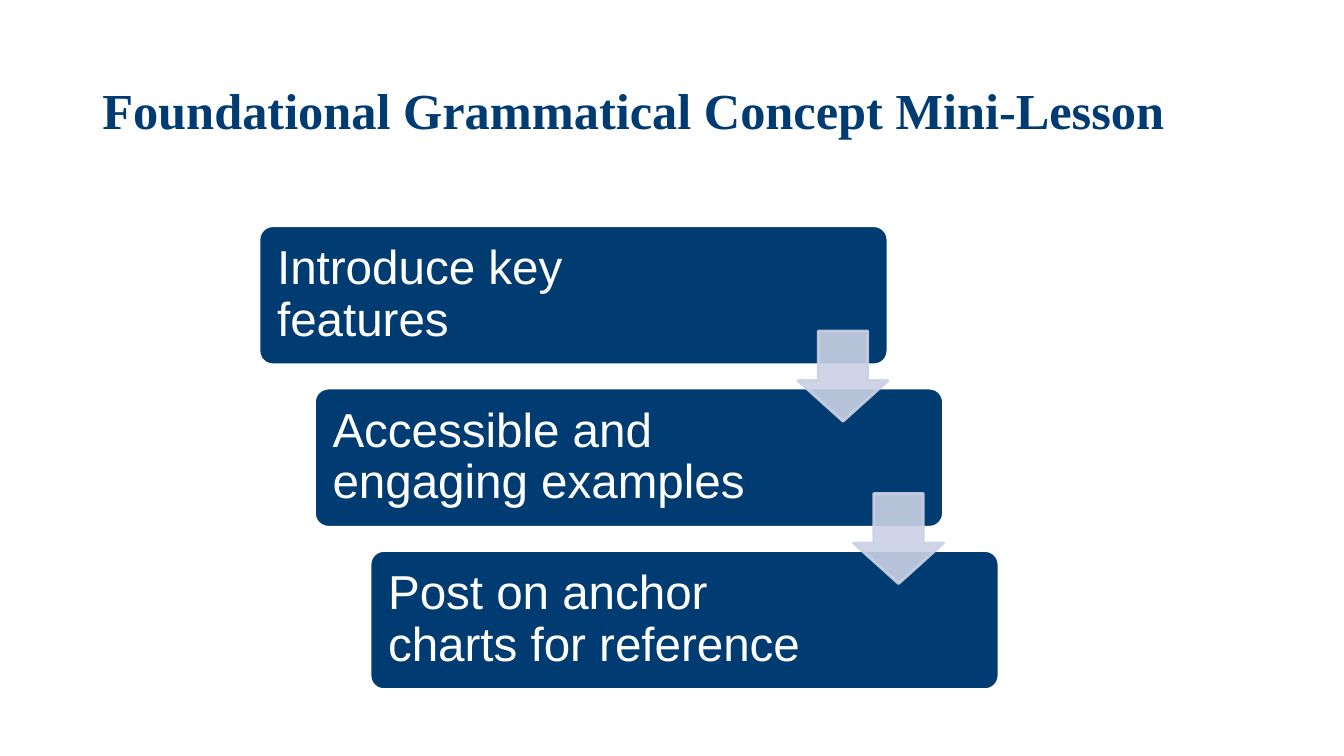
"""Build the slide on the steps of a grammar mini-lesson."""
from lxml.etree import SubElement
from pptx import Presentation
from pptx.dml.color import RGBColor
from pptx.enum.shapes import MSO_SHAPE as Shape
from pptx.enum.text import MSO_ANCHOR as Anchor
from pptx.oxml.ns import qn
from pptx.util import Pt

COLORS = {"title": "003B71", "step": "003C71", "arrow": "CAD1E4", "white": "FFFFFF"}
STEPS = [
    "Introduce key features",
    "Accessible and engaging examples",
    "Post on anchor charts for reference",
]
STEP_LEFT, STEP_TOP = 185, 161.2
SHIFT_X, SHIFT_Y = 39.65, 116


class StepSlide:
    def __init__(self, deck):
        self.shapes = deck.slides.add_slide(deck.slide_layouts[6]).shapes

    def text(self, words, left, top, width, height, size, font, color,
             bold=False, inset_x=10, inset_y=10):
        box = self.shapes.add_textbox(Pt(left), Pt(top), Pt(width), Pt(height))
        frame = box.text_frame
        frame.word_wrap = True
        frame.vertical_anchor = Anchor.MIDDLE
        frame.margin_left = frame.margin_right = Pt(inset_x)
        frame.margin_top = frame.margin_bottom = Pt(inset_y)
        frame.text = words
        para = frame.paragraphs[0]
        para.line_spacing = 0.9
        span = para.runs[0]
        span.font.name = font
        span.font.size = Pt(size)
        span.font.bold = bold
        span.font.color.rgb = RGBColor.from_string(COLORS[color])

    def shape(self, kind, left, top, width, height, fill, line, adjustments, opacity=100):
        item = self.shapes.add_shape(kind, Pt(left), Pt(top), Pt(width), Pt(height))
        item.shadow.inherit = False
        for index, value in enumerate(adjustments):
            item.adjustments[index] = value
        item.fill.solid()
        item.fill.fore_color.rgb = RGBColor.from_string(COLORS[fill])
        item.line.color.rgb = RGBColor.from_string(COLORS[line])
        item.line.width = Pt(2)
        if opacity < 100:
            for color in item.element.spPr.iter(qn("a:srgbClr")):
                SubElement(color, qn("a:alpha"), val=str(opacity * 1000))

    def step(self, words, left, top):
        self.shape(Shape.ROUNDED_RECTANGLE, left, top, 449.3, 99.4, "step", "white", [0.1])
        self.text(words, left + 2.9, top + 2.9, 339.5, 93.6, 34, "Arial", "white")

    def arrow(self, left, top):
        self.shape(Shape.DOWN_ARROW, left, top, 64.4, 64.4, "arrow", "arrow",
                   [0.55, 0.45], opacity=90)


def main():
    deck = Presentation()
    deck.slide_width, deck.slide_height = Pt(960), Pt(540)
    slide = StepSlide(deck)
    slide.text("Foundational Grammatical Concept Mini-Lesson", 66, 28.8, 828, 104.4,
               36, "Times New Roman", "title", bold=True, inset_x=7.2, inset_y=3.6)
    places = [(STEP_LEFT + i * SHIFT_X, STEP_TOP + i * SHIFT_Y) for i in range(len(STEPS))]
    for words, (left, top) in zip(STEPS, places):
        slide.step(words, left, top)
    for left, top in places[:-1]:
        slide.arrow(left + 385, top + 75.3)
    deck.save("out.pptx")


if __name__ == "__main__":
    main()
